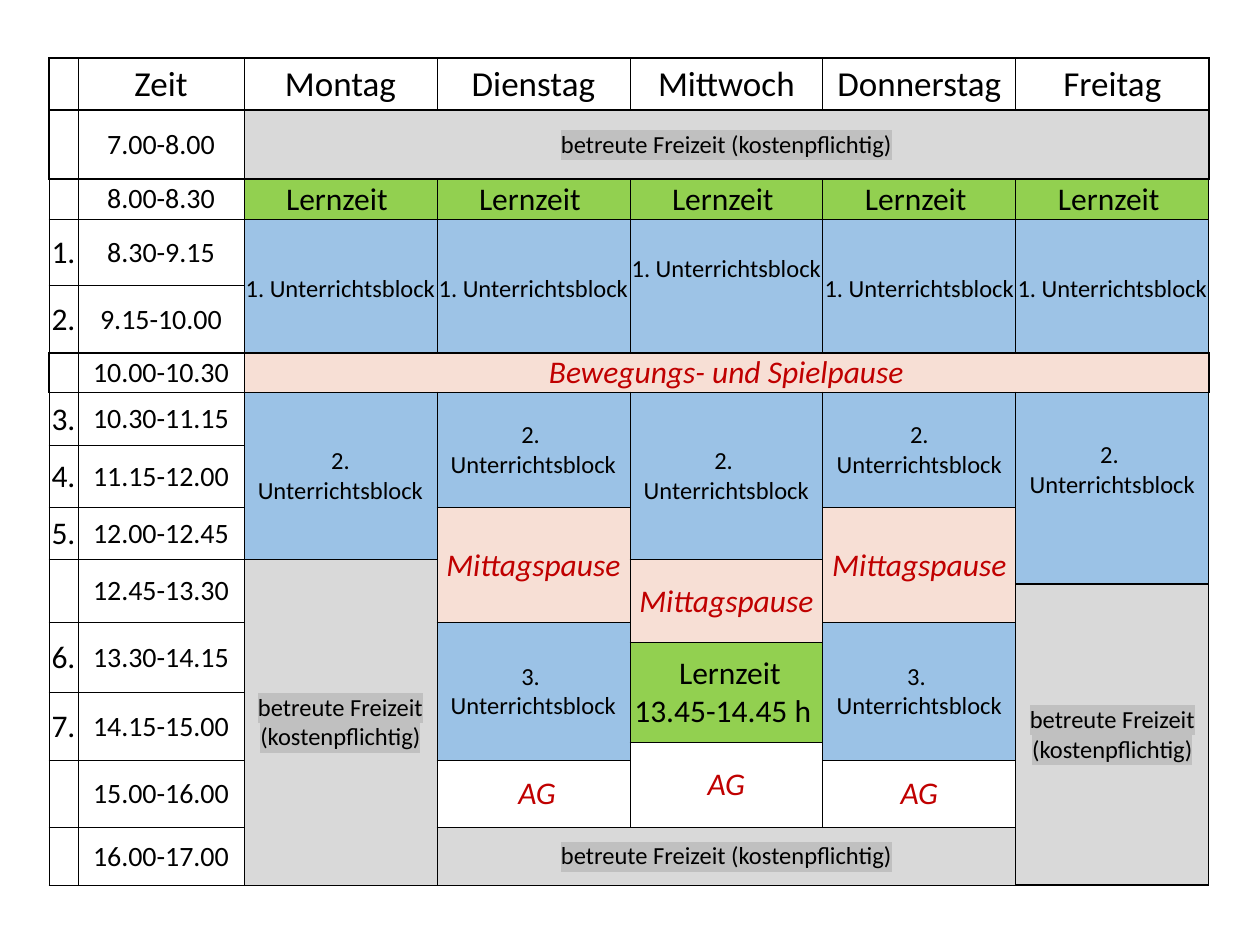
from lxml.etree import SubElement
from pptx import Presentation
from pptx.dml.color import RGBColor
from pptx.enum.text import MSO_ANCHOR, PP_ALIGN
from pptx.oxml.ns import qn
from pptx.util import Pt

PX = 914400 / 126
INK = {"black": "000000", "red": "C00000", "white": "FFFFFF", "grey": "D9D9D9",
       "mark": "C0C0C0", "green": "92D050", "blue": "9DC3E6", "sky": "9BC2E6",
       "rose": "F7DFD5"}
# Look: text size, text colour, fill
LOOKS = {"head": (20, "black", None), "time": (16, "black", None),
         "hour": (18, "black", None), "free": (14, "black", "grey"),
         "learn": (18, "black", "green"), "first": (14, "black", "blue"),
         "block": (14, "black", "sky"), "pause": (18, "red", "rose"),
         "club": (18, "red", "white")}
COLS = [29, 166] + [193] * 5
ROWS = [52, 69, 40, 67, 67, 39, 53, 62, 52, 25, 38, 20, 50, 50, 18, 67, 58]
THICK = {0, 1, 2, 5, 6}  # row edges drawn with a 1 pt line

prs = Presentation()
prs.slide_width, prs.slide_height = round(1260 * PX), round(945 * PX)
slide = prs.slides.add_slide(prs.slide_layouts[6])
frame = slide.shapes.add_table(len(ROWS), len(COLS), round(49 * PX), round(58 * PX),
                               round(sum(COLS) * PX), round(sum(ROWS) * PX))
table = frame.table
table.first_row = table.horz_banding = False
style = table._tbl.tblPr.find(qn("a:tableStyleId"))
style.text = "{2D5ABB26-0587-4C30-8999-92F81FD0307C}"
for col, width in zip(table.columns, COLS):
    col.width = round(width * PX)
for row, height in zip(table.rows, ROWS):
    row.height = round(height * PX)

# Tight margins, and a small size so that empty cells do not stretch rows
for cell in table.iter_cells():
    cell.margin_left = cell.margin_right = cell.margin_top = round(PX)
    cell.margin_bottom = 0
    cell.vertical_anchor = MSO_ANCHOR.MIDDLE
    SubElement(cell.text_frame.paragraphs[0]._p, qn("a:endParaRPr"), sz="600")


def write(para, text, size, color):
    run = para.add_run()
    run.text = text
    font = run.font
    font.size, font.name = Pt(size), "Calibri"
    font.color.rgb = RGBColor.from_string(INK[color])
    if color == "red":
        font.italic = True
    return run


def put(row, col, look, lines, rows=1, cols=1, tail=""):
    size, color, fill = LOOKS[look]
    cell = table.cell(row, col)
    if rows * cols > 1:
        cell.merge(table.cell(row + rows - 1, col + cols - 1))
    if fill:
        cell.fill.solid()
        cell.fill.fore_color.rgb = RGBColor.from_string(INK[fill])
    for i, line in enumerate(lines):
        para = cell.text_frame.paragraphs[0] if i == 0 else cell.text_frame.add_paragraph()
        para.alignment = PP_ALIGN.CENTER
        run = write(para, line, size, color)
        if look == "free":
            mark = SubElement(run._r.rPr, qn("a:highlight"))
            SubElement(mark, qn("a:srgbClr"), val=INK["mark"])
            run._r.rPr.find(qn("a:solidFill")).addnext(mark)
        if tail:
            write(para, tail, 18, color)


# Header row
for col, name in enumerate(["Zeit", "Montag", "Dienstag", "Mittwoch", "Donnerstag",
                            "Freitag"], 1):
    put(0, col, "head", [name])

# Lesson numbers and times: row, rows, number, time
TIMES = [(1, 1, "", "7.00-8.00"), (2, 1, "", "8.00-8.30"), (3, 1, "1.", "8.30-9.15"),
         (4, 1, "2.", "9.15-10.00"), (5, 1, "", "10.00-10.30"),
         (6, 1, "3.", "10.30-11.15"), (7, 1, "4.", "11.15-12.00"),
         (8, 1, "5.", "12.00-12.45"), (9, 2, "", "12.45-13.30"),
         (11, 2, "6.", "13.30-14.15"), (13, 2, "7.", "14.15-15.00"),
         (15, 1, "", "15.00-16.00"), (16, 1, "", "16.00-17.00")]
for row, rows, hour, time in TIMES:
    put(row, 0, "hour", [hour] if hour else [], rows)
    put(row, 1, "time", [time], rows)

# Bands across several days
CARE = "betreute Freizeit (kostenpflichtig)"
put(1, 2, "free", [CARE], cols=5)
put(5, 2, "pause", ["Bewegungs- und Spielpause"], cols=5)
put(16, 3, "free", [CARE], cols=3)

# Morning, the same each day
for col in range(2, 7):
    put(2, col, "learn", ["Lernzeit "])
    put(3, col, "first", ["1. Unterrichtsblock"], 2, tail="  " if col == 4 else " ")

# Second block
for col, rows, number in [(2, 3, "2."), (3, 2, "2. "), (4, 3, "2. "), (5, 2, "2."),
                          (6, 4, "2. ")]:
    put(6, col, "block", [number, "Unterrichtsblock"], rows)
table.cell(6, 6).margin_bottom = round(38 * PX)

# Afternoons: Monday and Friday, Tuesday and Thursday, Wednesday
for row, col, rows in [(9, 2, 8), (10, 6, 7)]:
    put(row, col, "free", ["betreute Freizeit", "(kostenpflichtig)"], rows)
for col, club in [(3, " AG"), (5, "AG")]:
    put(8, col, "pause", ["Mittagspause"], 3)
    put(11, col, "block", ["3. ", "Unterrichtsblock"], 4)
    put(15, col, "club", [club])
put(9, 4, "pause", ["Mittagspause"], 3)
put(12, 4, "learn", [" Lernzeit 13.45-14.45 h "], 2)
put(14, 4, "club", ["AG"], 2)

# Cell borders
for row in range(len(ROWS)):
    for col in range(len(COLS)):
        cell = table.cell(row, col)
        if cell.is_spanned:
            continue
        end = row + (cell.span_height if cell.is_merge_origin else 1)
        last = col + (cell.span_width if cell.is_merge_origin else 1) == len(COLS)
        outer = row in (0, 1, 5)
        friday = (row, col) == (10, 6)
        bold = {"L": outer and col == 0, "R": outer and last,
                "T": row in THICK or friday, "B": end in THICK or friday}
        props = cell._tc.get_or_add_tcPr()
        for i, (side, wide) in enumerate(bold.items()):
            line = SubElement(props, qn("a:ln" + side), w=str(Pt(1 if wide else 0.5)))
            SubElement(SubElement(line, qn("a:solidFill")), qn("a:srgbClr"),
                       val=INK["black"])
            props.insert(i, line)

prs.save("out.pptx")
